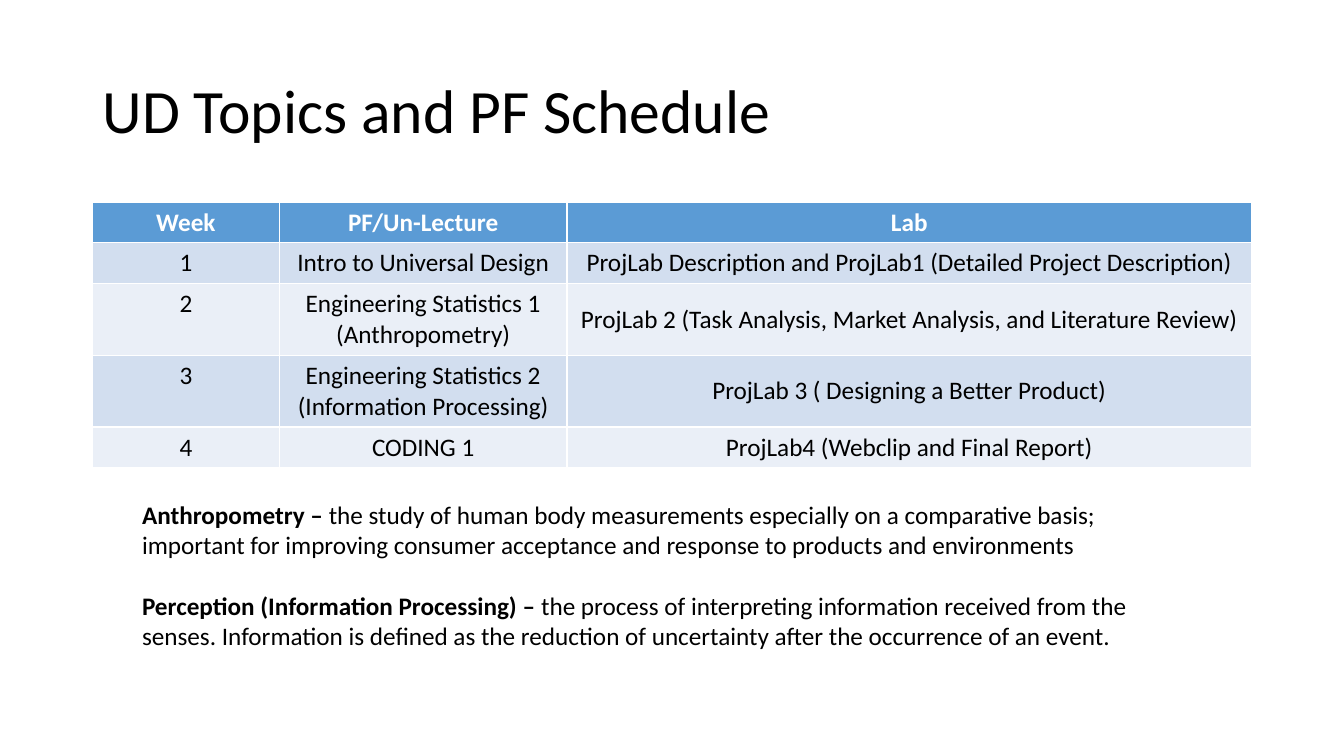
from pptx import Presentation
from pptx.dml.color import RGBColor
from pptx.enum.text import MSO_ANCHOR as Anchor, MSO_AUTO_SIZE as Fit, PP_ALIGN as Align
from pptx.util import Cm, Pt


def tint(code):
    return RGBColor.from_string(code)


def write(para, text, size=18, color="000000", bold=False, align=Align.LEFT):
    para.alignment = align
    run = para.add_run()
    run.text = text
    font = run.font
    font.name, font.size, font.bold = "Calibri", Pt(size), bold
    font.color.rgb = tint(color)


deck = Presentation()
deck.slide_width, deck.slide_height = Cm(33.87), Cm(19.05)
slide = deck.slides.add_slide(deck.slide_layouts[5])

# Title
title = slide.shapes.title
title.left, title.top, title.width, title.height = Cm(2.33), Cm(1.01), Cm(29.21), Cm(3.68)
frame = title.text_frame
frame.auto_size, frame.word_wrap = Fit.NONE, True
frame.vertical_anchor = Anchor.MIDDLE
frame.paragraphs[0].line_spacing = 0.9
write(frame.paragraphs[0], "UD Topics and PF Schedule", size=44)

# Schedule: the default table style gives the white rules
plan = [
    ("Week", "PF/Un-Lecture", "Lab"),
    ("1", "Intro to Universal Design",
     "ProjLab Description and ProjLab1 (Detailed Project Description)"),
    ("2", "Engineering Statistics 1 (Anthropometry)",
     "ProjLab 2 (Task Analysis, Market Analysis, and Literature Review)"),
    ("3", "Engineering Statistics 2 (Information Processing)",
     "ProjLab 3 ( Designing a Better Product)"),
    ("4", "CODING 1", "ProjLab4 (Webclip and Final Report)"),
]
widths = [4.71, 7.25, 17.25]
heights = [1.03, 1.03, 1.8, 1.8, 1.03]
table = slide.shapes.add_table(len(plan), len(widths), Cm(2.33), Cm(5.09),
                               Cm(sum(widths)), Cm(sum(heights))).table
for col, width in zip(table.columns, widths):
    col.width = Cm(width)
for r, (line, height) in enumerate(zip(plan, heights)):
    table.rows[r].height = Cm(height)
    head = r == 0
    fill = "5B9BD5" if head else ("EAEFF7", "D2DEEF")[r % 2]
    for c, text in enumerate(line):
        cell = table.cell(r, c)
        cell.fill.solid()
        cell.fill.fore_color.rgb = tint(fill)
        if c == 2 and not head:
            cell.vertical_anchor = Anchor.MIDDLE
        write(cell.text_frame.paragraphs[0], text, bold=head,
              color="FFFFFF" if head else "000000", align=Align.CENTER)

# Definitions
terms = [
    ("Anthropometry – ",
     "the study of human body measurements especially on a comparative basis; "
     "important for improving consumer acceptance and response to products and environments"),
    ("Perception (Information Processing) – ",
     "the process of interpreting information received from the senses. "
     "Information is defined as the reduction of uncertainty after the occurrence of an event."),
]
notes = slide.shapes.add_textbox(Cm(3.33), Cm(12.45), Cm(26.47), Cm(4.11)).text_frame
notes.word_wrap = True
for i, (term, sense) in enumerate(terms):
    para = notes.add_paragraph() if i else notes.paragraphs[0]
    para.space_before = Pt(22 * i)
    write(para, term, bold=True)
    write(para, sense)

deck.save("out.pptx")
